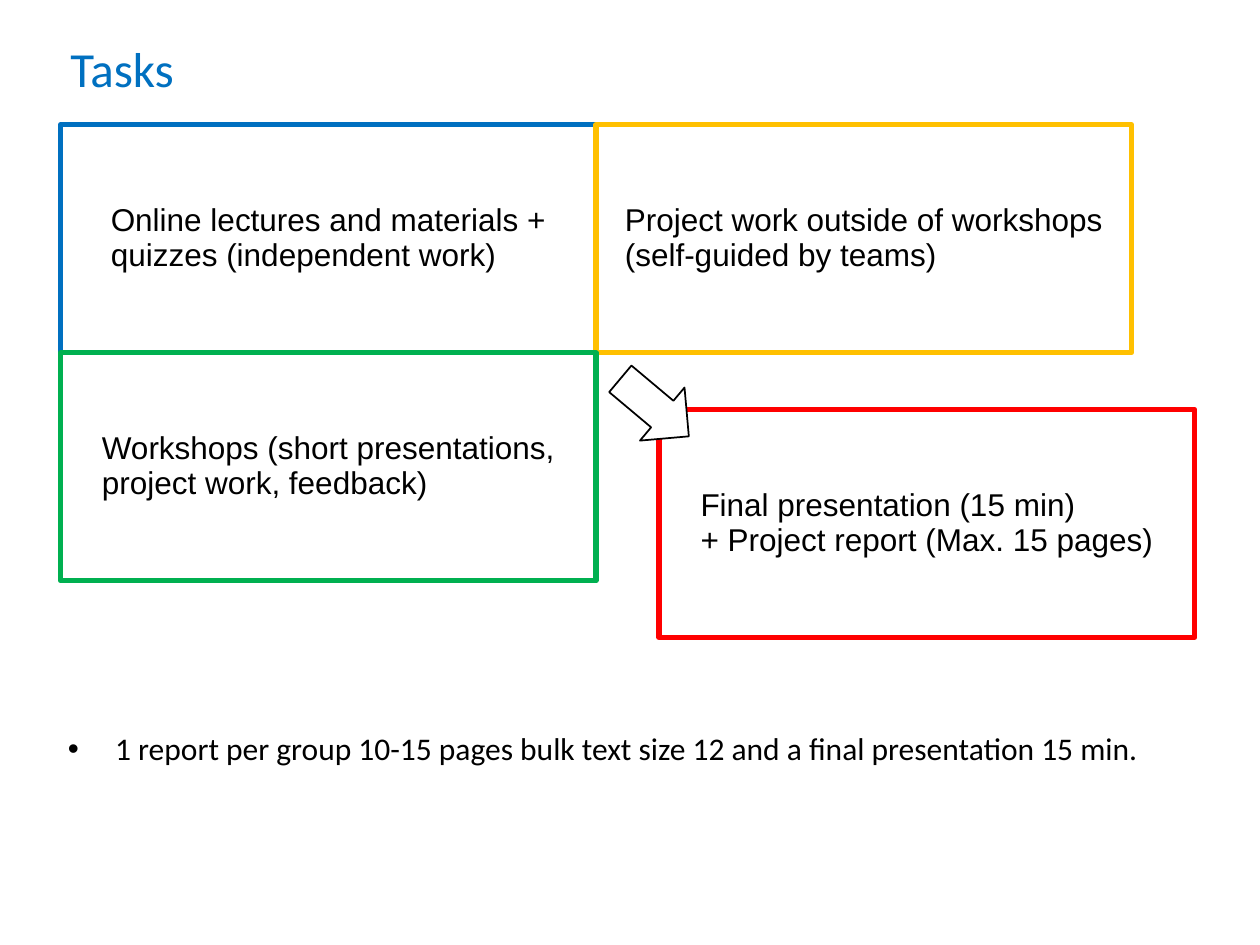
from lxml.etree import SubElement
from pptx import Presentation
from pptx.dml.color import RGBColor
from pptx.enum.shapes import MSO_SHAPE
from pptx.enum.text import MSO_ANCHOR, MSO_AUTO_SIZE, PP_ALIGN
from pptx.oxml.ns import qn
from pptx.util import Pt

COLOURS = {
    "black": "000000",
    "white": "FFFFFF",
    "blue": "0070C0",
    "yellow": "FFC000",
    "green": "00B050",
    "red": "FF0000",
}
BOX_WIDTH, BOX_HEIGHT = 306, 130.3
GRID_LEFT, GRID_TOP = 34.6, 71.3


def colour(name):
    return RGBColor.from_string(COLOURS[name])


class SlideBuilder:
    heading_font = "Calibri"
    box_font = "Arial"
    body_size = 18

    def __init__(self, slide):
        self.slide = slide

    def style_font(self, paragraph, name, size, colour_name="black"):
        font = paragraph.font
        font.name = name
        font.size = Pt(size)
        font.color.rgb = colour(colour_name)

    def text_box(self, left, top, width, height):
        shape = self.slide.shapes.add_textbox(Pt(left), Pt(top), Pt(width), Pt(height))
        shape.text_frame.word_wrap = True
        return shape.text_frame

    def title(self, text, left, top, width, height):
        paragraph = self.text_box(left, top, width, height).paragraphs[0]
        paragraph.text = text
        self.style_font(paragraph, self.heading_font, 28, "blue")

    def bullet(self, text, left, top, width, height, indent=27):
        frame = self.text_box(left, top, width, height)
        frame.auto_size = MSO_AUTO_SIZE.SHAPE_TO_FIT_TEXT
        paragraph = frame.paragraphs[0]
        paragraph.text = text
        paragraph.line_spacing = 1.07
        properties = paragraph._p.get_or_add_pPr()
        properties.set("marL", str(Pt(indent)))
        properties.set("indent", str(-Pt(indent)))
        SubElement(properties, qn("a:buFont"), typeface="Arial")
        SubElement(properties, qn("a:buChar"), char="•")
        self.style_font(paragraph, self.heading_font, self.body_size)

    def outlined_shape(self, kind, left, top, width, height, line_colour, line_width):
        shape = self.slide.shapes.add_shape(kind, Pt(left), Pt(top), Pt(width), Pt(height))
        shape.shadow.inherit = False
        shape.fill.solid()
        shape.fill.fore_color.rgb = colour("white")
        shape.line.color.rgb = colour(line_colour)
        shape.line.width = Pt(line_width)
        return shape

    def task_box(self, lines, left, top, line_colour):
        """Draw a box whose left-aligned text is centred as a block."""
        shape = self.outlined_shape(
            MSO_SHAPE.RECTANGLE, left, top, BOX_WIDTH, BOX_HEIGHT, line_colour, 3)
        SubElement(shape.line._get_or_add_ln(), qn("a:round"))
        frame = shape.text_frame
        frame.word_wrap = True
        frame.vertical_anchor = MSO_ANCHOR.MIDDLE
        frame._txBody.bodyPr.set("anchorCtr", "1")
        frame.text = "\n".join(lines)
        for paragraph in frame.paragraphs:
            paragraph.alignment = PP_ALIGN.LEFT
            paragraph.line_spacing = 0.93
            self.style_font(paragraph, self.box_font, self.body_size)

    def arrow(self, left, top, width, height, rotation):
        shape = self.outlined_shape(
            MSO_SHAPE.RIGHT_ARROW, left, top, width, height, "black", 1)
        shape.rotation = rotation


def main():
    presentation = Presentation()
    presentation.slide_width, presentation.slide_height = Pt(720), Pt(540)
    builder = SlideBuilder(presentation.slides.add_slide(presentation.slide_layouts[6]))

    builder.bullet(
        "1 report per group 10-15 pages bulk text size 12 and a final presentation 15 min.",
        31.7, 411.8, 686, 29.5)

    right_column, second_row = GRID_LEFT + BOX_WIDTH, GRID_TOP + BOX_HEIGHT
    tasks = [
        (["Online lectures and materials + quizzes (independent work)"],
         GRID_LEFT, GRID_TOP, "blue"),
        (["Project work outside of workshops (self-guided by teams)"],
         right_column, GRID_TOP, "yellow"),
        (["Workshops (short presentations, project work, feedback)"],
         GRID_LEFT, second_row, "green"),
        (["Final presentation (15 min)", "+ Project report (Max. 15 pages)"],
         right_column + 36, second_row + 32.4, "red"),
    ]
    for task in tasks:
        builder.task_box(*task)

    builder.arrow(348.5, 213.1, 51.1, 39.6, rotation=40)
    builder.title("Tasks", 33.1, 18.7, 578, 33.8)
    presentation.save("out.pptx")


if __name__ == "__main__":
    main()
